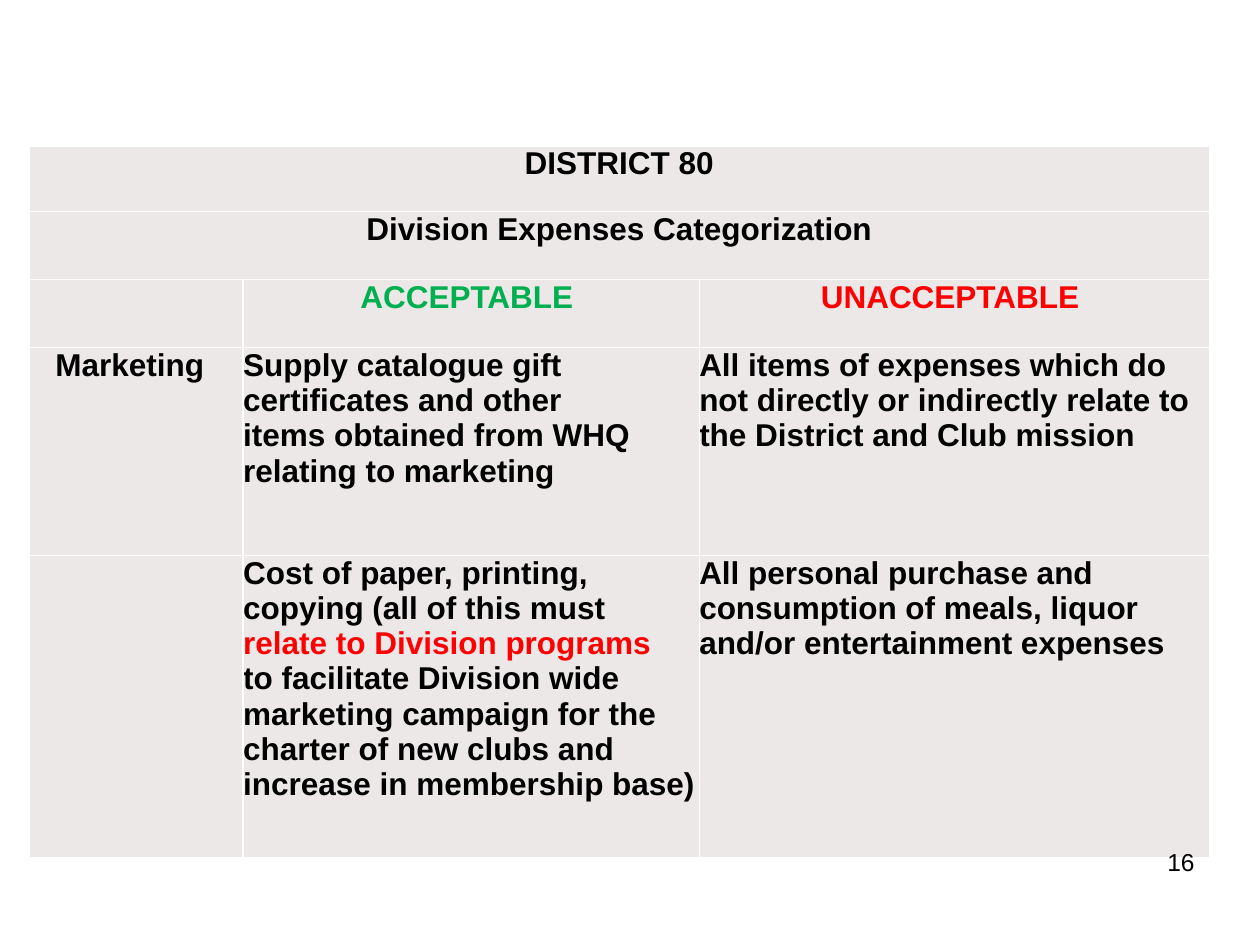
from lxml.etree import SubElement
from pptx import Presentation
from pptx.dml.color import RGBColor
from pptx.enum.text import PP_ALIGN
from pptx.oxml.ns import qn
from pptx.util import Inches, Pt

BLACK = RGBColor(0x00, 0x00, 0x00)
GREEN = RGBColor(0x00, 0xB0, 0x50)
RED = RGBColor(0xFF, 0x00, 0x00)
GREY = RGBColor(0xEC, 0xE8, 0xE8)


def add_text(tf, lines, align, **fmt):
    for i, (text, color) in enumerate(lines):
        p = tf.paragraphs[0] if i == 0 else tf.add_paragraph()
        p.alignment = align
        r = p.add_run()
        r.text = text
        r.font.color.rgb = color
        for name, value in {"name": "Arial", **fmt}.items():
            setattr(r.font, name, value)


def set_borders(cell):
    tcPr = cell._tc.get_or_add_tcPr()
    for i, side in enumerate(("lnL", "lnR", "lnT", "lnB")):
        ln = tcPr.makeelement(qn(f"a:{side}"), {"w": str(Pt(1))})
        fill = SubElement(ln, qn("a:solidFill"))
        SubElement(fill, qn("a:srgbClr"), val="FFFFFF")
        tcPr.insert(i, ln)


prs = Presentation()
prs.slide_width, prs.slide_height = Inches(10), Inches(7.5)
s = prs.slides.add_slide(prs.slide_layouts[6])

# Expense table
col_widths = [1.7, 3.62, 4.05]
row_heights = [0.52, 0.54, 0.54, 1.65, 2.4]
table = s.shapes.add_table(
    len(row_heights), len(col_widths), Inches(0.23), Inches(1.16),
    Inches(sum(col_widths)), Inches(sum(row_heights))).table
for col, width in zip(table.columns, col_widths):
    col.width = Inches(width)
for row, height in zip(table.rows, row_heights):
    row.height = Inches(height)

margins = {"margin_left": 0, "margin_right": 0, "margin_top": 0, "margin_bottom": 0}
for cell in table.iter_cells():
    for name, value in margins.items():
        setattr(cell, name, value)
    cell.fill.solid()
    cell.fill.fore_color.rgb = GREY
    set_borders(cell)

# Title rows span all columns
for row in (0, 1):
    table.cell(row, 0).merge(table.cell(row, 2))

# Cell text by row and column
contents = {
    (0, 0): [("DISTRICT 80", BLACK)],
    (1, 0): [("Division Expenses Categorization", BLACK)],
    (2, 1): [("ACCEPTABLE ", GREEN)],
    (2, 2): [("UNACCEPTABLE ", RED)],
    (3, 0): [("Marketing", BLACK)],
    (3, 1): [("Supply catalogue gift certificates and other", BLACK),
             ("items obtained from WHQ relating to marketing", BLACK)],
    (3, 2): [("All items of expenses which do not directly or indirectly "
              "relate to the District and Club mission", BLACK)],
    (4, 1): [("Cost of paper, printing, copying (all of this must", BLACK),
             ("relate to Division programs", RED),
             ("to facilitate Division wide marketing campaign for the charter "
              "of new clubs and increase in membership base)", BLACK)],
    (4, 2): [("All personal purchase and consumption of meals, liquor "
              "and/or entertainment expenses", BLACK)],
}
for (row, col), lines in contents.items():
    align = PP_ALIGN.CENTER if row < 3 else PP_ALIGN.LEFT
    add_text(table.cell(row, col).text_frame, lines, align, size=Pt(18), bold=True)
table.cell(3, 0).margin_left = Inches(0.21)

# Slide number
tf = s.shapes.add_textbox(Inches(7.25), Inches(6.67), Inches(2.33), Inches(0.52)).text_frame
tf.word_wrap = True
add_text(tf, [("16", BLACK)], PP_ALIGN.RIGHT, size=Pt(14))

prs.save("out.pptx")
